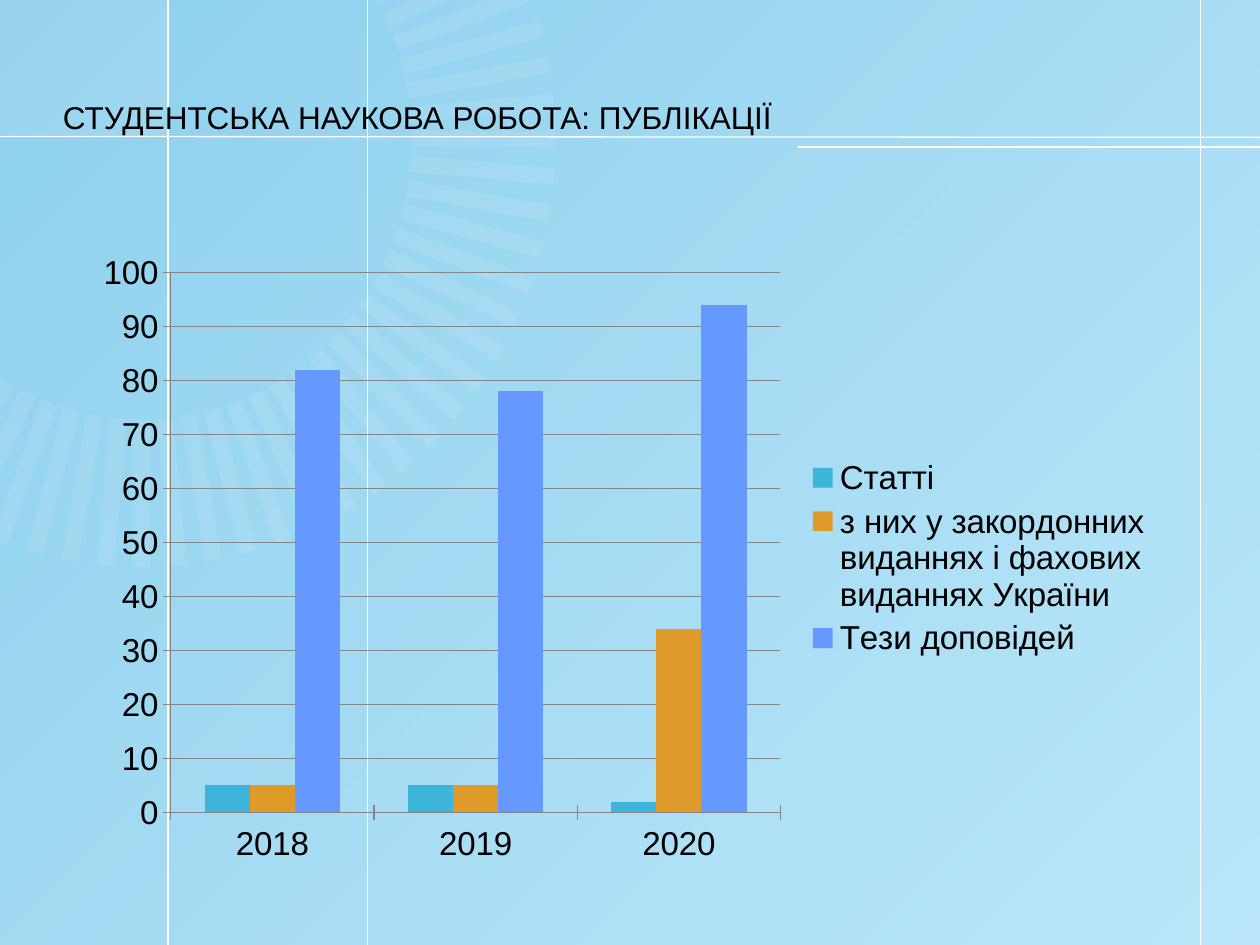
"""Build the slide on student publications: ray backdrop, title and column chart."""
from dataclasses import dataclass
from math import cos, radians, sin

from lxml.etree import SubElement
from pptx import Presentation
from pptx.chart.data import CategoryChartData
from pptx.dml.color import RGBColor
from pptx.enum.chart import XL_CHART_TYPE, XL_LEGEND_POSITION, XL_TICK_MARK
from pptx.enum.shapes import MSO_CONNECTOR, MSO_SHAPE
from pptx.enum.text import MSO_ANCHOR
from pptx.oxml.ns import qn
from pptx.util import Pt


@dataclass
class Theme:
    """Colours and type sizes."""
    back = RGBColor.from_string("BCE7FA")
    tint = RGBColor.from_string("0F92CC")
    white = RGBColor.from_string("FFFFFF")
    ray = RGBColor.from_string("F2FAFE")
    ink = RGBColor.from_string("000000")
    grid = RGBColor.from_string("868686")
    bars = [RGBColor.from_string(c) for c in ("3DB5DB", "DF9B29", "6699FF")]
    face = "Arial"
    title = Pt(18)
    label = Pt(18.9)
    rule = Pt(0.75)


def fade(shape, *levels):
    """Drop the outline and shadow, and set the opacity of each fill colour."""
    shape.shadow.inherit = False
    shape.line.fill.background()
    for tone, level in zip(shape.element.xpath("./p:spPr//a:srgbClr"), levels):
        SubElement(tone, qn("a:alpha"), val=str(level * 1000))


def clip(points, axis):
    """Keep the part of a polygon where the given coordinate is not negative."""
    kept = []
    for a, b in zip(points, points[1:] + points[:1]):
        if a[axis] >= 0:
            kept.append(a)
        if (a[axis] >= 0) != (b[axis] >= 0):
            t = a[axis] / (a[axis] - b[axis])
            kept.append(tuple(p + t * (q - p) for p, q in zip(a, b)))
    return kept


theme = Theme()
deck = Presentation()
deck.slide_width, deck.slide_height = Pt(720), Pt(540)
slide = deck.slides.add_slide(deck.slide_layouts[6])
shapes = slide.shapes
slide.background.fill.solid()
slide.background.fill.fore_color.rgb = theme.back

wash = shapes.add_shape(MSO_SHAPE.RECTANGLE, 0, 0, Pt(720), Pt(540))
wash.fill.gradient()
wash.fill.gradient_angle = 315
for stop in wash.fill.gradient_stops:
    stop.color.rgb = theme.tint
fade(wash, 27, 0)

corner = shapes.add_shape(MSO_SHAPE.RECTANGLE, 0, 0, Pt(96), Pt(78))
corner.fill.solid()
corner.fill.fore_color.rgb = theme.white
fade(corner, 10)

rules = [(96, 0, 96, 540), (686, 0, 686, 540), (210, 0, 210, 540),
         (0, 78, 720, 78.5), (456, 84, 720, 84)]
for ends in rules:
    rule = shapes.add_connector(MSO_CONNECTOR.STRAIGHT, *map(Pt, ends))
    rule.line.color.rgb = theme.white
    rule.line.width = theme.rule
    SubElement(rule.element.spPr, qn("a:effectLst"))

mid_x, mid_y, half = 81, 79.6, 4.7
inner, outer = (154.4, 160.2), (236.5, 244.4)
rays = shapes.add_group_shape().shapes
for angle in range(-30, 121, 5):
    c, s = cos(radians(angle)), sin(radians(angle))
    corners = [(mid_x + rx * c - side * s, mid_y + ry * s + side * c)
               for (rx, ry), side in ((inner, -half), (outer, -half),
                                      (outer, half), (inner, half))]
    points = [tuple(map(Pt, p)) for p in clip(clip(corners, 0), 1)]
    if angle in (0, 90):
        xs, ys = zip(*points)
        ray = rays.add_shape(MSO_SHAPE.RECTANGLE, min(xs), min(ys),
                             max(xs) - min(xs), max(ys) - min(ys))
    else:
        path = rays.build_freeform(*points[0])
        path.add_line_segments(points[1:], close=True)
        ray = path.convert_to_shape()
    ray.fill.solid()
    ray.fill.fore_color.rgb = theme.ray
    fade(ray, 10)

title = shapes.add_textbox(Pt(36), Pt(21.6), Pt(648), Pt(90)).text_frame
frame = {"word_wrap": True, "vertical_anchor": MSO_ANCHOR.MIDDLE,
         "margin_left": 0, "margin_top": 0, "margin_right": 0, "margin_bottom": 0}
for key, value in frame.items():
    setattr(title, key, value)
title.text = "СТУДЕНТСЬКА НАУКОВА РОБОТА: ПУБЛІКАЦІЇ"

data = CategoryChartData()
data.categories = ["2018", "2019", "2020"]
data.add_series("Статті", (5, 5, 2))
data.add_series("з них у закордонних виданнях і фахових виданнях України", (5, 5, 34))
data.add_series("Тези доповідей", (82, 78, 94))
chart = shapes.add_chart(XL_CHART_TYPE.COLUMN_CLUSTERED, Pt(46.8), Pt(138.2),
                         Pt(619.2), Pt(361.4), data).chart
chart.has_title = False
chart.has_legend = True
chart.legend.position = XL_LEGEND_POSITION.RIGHT
chart.legend.include_in_layout = False

for font, size in ((title.paragraphs[0].runs[0].font, theme.title),
                   (chart.font, theme.label)):
    for key, value in {"name": theme.face, "size": size}.items():
        setattr(font, key, value)
    font.color.rgb = theme.ink

plot = chart.plots[0]
for key, value in {"gap_width": 150, "overlap": 0, "vary_by_categories": False}.items():
    setattr(plot, key, value)
for series, tone in zip(plot.series, theme.bars):
    series.format.fill.solid()
    series.format.fill.fore_color.rgb = tone

scale = chart.value_axis
for key, value in {"minimum_scale": 0, "maximum_scale": 100, "major_unit": 10,
                   "has_major_gridlines": True}.items():
    setattr(scale, key, value)
for axis in (scale, chart.category_axis):
    axis.major_tick_mark = XL_TICK_MARK.CROSS
for part in (scale, chart.category_axis, scale.major_gridlines):
    part.format.line.color.rgb = theme.grid
    part.format.line.width = theme.rule

deck.save("out.pptx")
